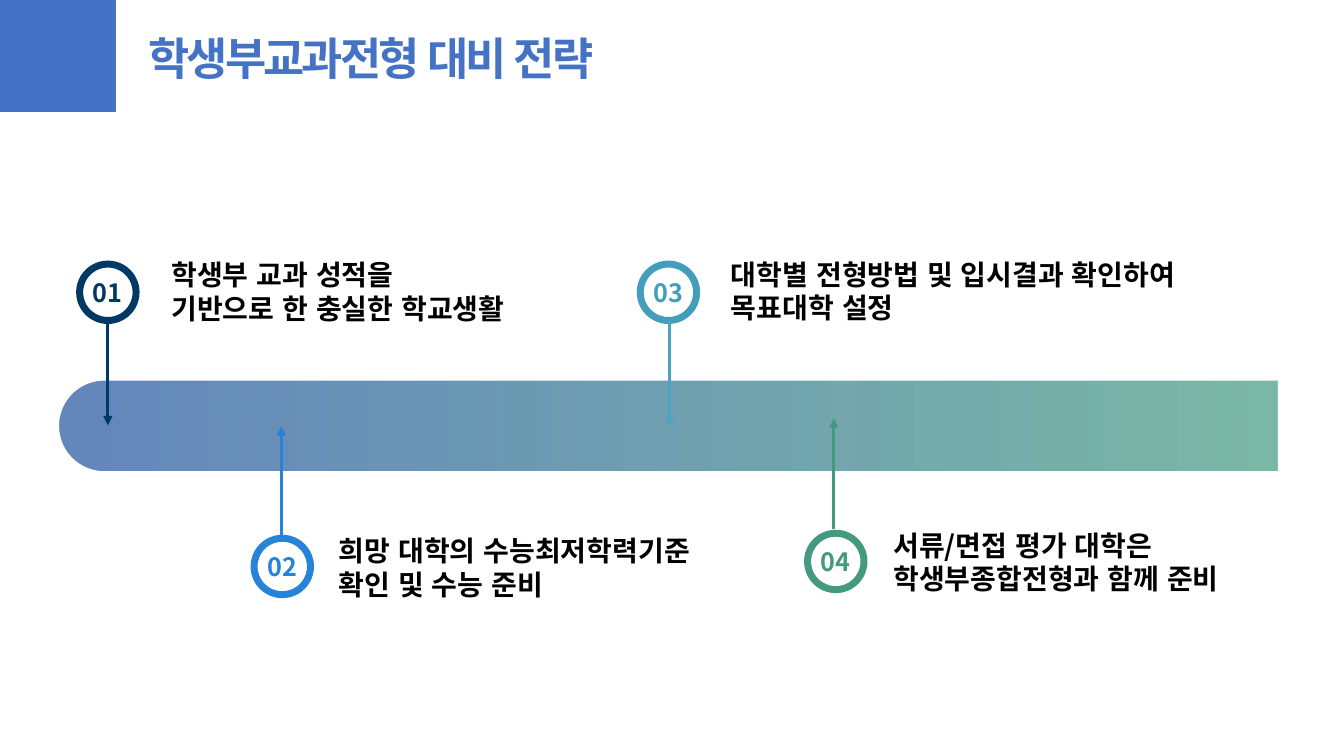
"""Build the timeline slide on preparing for the school-record admission track."""
from lxml import etree
from pptx import Presentation
from pptx.dml.color import RGBColor
from pptx.enum.lang import MSO_LANGUAGE_ID as Language
from pptx.enum.shapes import MSO_CONNECTOR as Connector, MSO_SHAPE as Shape
from pptx.enum.text import MSO_ANCHOR as Anchor, PP_ALIGN as Align
from pptx.oxml.ns import qn
from pptx.util import Inches, Pt

FONT = "Noto Sans CJK KR"
BLUE = RGBColor(0x44, 0x72, 0xC4)
BLACK = RGBColor(0, 0, 0)
WHITE = RGBColor(0xFF, 0xFF, 0xFF)
BAR_START = RGBColor(0x24, 0x56, 0xA0)
NAVY = RGBColor(0x00, 0x39, 0x64)
AZURE = RGBColor(0x27, 0x83, 0xD7)
TEAL = RGBColor(0x43, 0x9E, 0xBB)
TEAL_ARROW = RGBColor(0x4C, 0xA3, 0xBE)
GREEN = RGBColor(0x44, 0x9A, 0x7F)
CIRCLE = 0.56

STEPS = [
    ("01", NAVY, NAVY, (0.79, 2.62), (1.07, 3.17, 4.22), (1.7, 2.42, 4.25, 0.94),
     ["학생부 교과 성적을", "기반으로 한 충실한 학교생활"]),
    ("02", AZURE, AZURE, (2.52, 5.34), (2.79, 5.33, 4.23), (3.36, 5.33, 4.48, 0.59),
     ["희망 대학의 수능최저학력기준", "확인 및 수능 준비"]),
    ("03", TEAL, TEAL_ARROW, (6.35, 2.62), (6.64, 3.18, 4.23), (7.25, 2.59, 4.85, 0.59),
     ["대학별 전형방법 및 입시결과 확인하여 목표대학 설정"]),
    ("04", GREEN, GREEN, (8.01, 5.29), (8.27, 5.25, 4.15), (8.86, 5.28, 3.91, 0.59),
     ["서류/면접 평가 대학은 학생부종합전형과 함께 준비"]),
]


def write(box, lines, size, color, align=Align.LEFT, spacing=None):
    frame = box.text_frame
    frame.word_wrap = True
    frame.vertical_anchor = Anchor.MIDDLE
    frame.margin_left = frame.margin_right = frame.margin_top = frame.margin_bottom = 0
    for index, line in enumerate(lines):
        para = frame.add_paragraph() if index else frame.paragraphs[0]
        para.alignment = align
        para.line_spacing = spacing
        span = para.add_run()
        span.text = line
        font = span.font
        font.size, font.bold, font.name = Pt(size), True, FONT
        font.color.rgb = color
        font.language_id = Language.KOREAN
        etree.SubElement(span._r.get_or_add_rPr(), qn("a:ea"), typeface=FONT)


def place(kind, left, top, width, height):
    shape = page.shapes.add_shape(kind, Inches(left), Inches(top), Inches(width), Inches(height))
    shape.shadow.inherit = False
    return shape


deck = Presentation()
deck.slide_width, deck.slide_height = Inches(13.33), Inches(7.5)
page = deck.slides.add_slide(deck.slide_layouts[5])

title = page.shapes.title
title.left, title.top, title.width, title.height = (Inches(n) for n in (1.47, 0.3, 9.41, 0.54))
write(title, ["학생부교과전형 대비 전략"], 32, BLUE)
title.text_frame.paragraphs[0].runs[0].font._element.set("spc", "-200")

bar = place(Shape.ROUND_2_SAME_RECTANGLE, 6.16, -1.84, 0.94, 12.13)
bar.rotation = 270
bar.adjustments[0], bar.adjustments[1] = 0.5, 0
bar.fill.gradient()
bar.fill.gradient_angle = 270
for stop, position, color in zip(bar.fill.gradient_stops, (0.03, 0.99), (BAR_START, GREEN)):
    stop.position = position
    stop.color.rgb = color
for tint in bar._element.spPr.iter(qn("a:srgbClr")):
    etree.SubElement(tint, qn("a:alpha"), val="70000")
bar.line.color.rgb = WHITE
bar.line.width = Pt(3)

for number, color, arrow_color, corner, (x, start, end), area, lines in STEPS:
    circle = place(Shape.OVAL, *corner, CIRCLE, CIRCLE)
    circle.fill.solid()
    circle.fill.fore_color.rgb = WHITE
    circle.line.color.rgb = color
    circle.line.width = Pt(5)
    write(circle, [number], 18, color, Align.CENTER)

    arrow = page.shapes.add_connector(
        Connector.STRAIGHT, Inches(x), Inches(start), Inches(x), Inches(end))
    arrow.line.color.rgb = arrow_color
    arrow.line.width = Pt(2.25)
    etree.SubElement(arrow.line._get_or_add_ln(), qn("a:tailEnd"), type="triangle")
    etree.SubElement(arrow._element.spPr, qn("a:effectLst"))

    label = page.shapes.add_textbox(*(Inches(n) for n in area))
    write(label, lines, 20, BLACK)

corner_block = place(Shape.RECTANGLE, 0, 0, 1.15, 1.11)
corner_block.fill.solid()
corner_block.fill.fore_color.rgb = BLUE
corner_block.line.fill.background()

deck.save("out.pptx")
